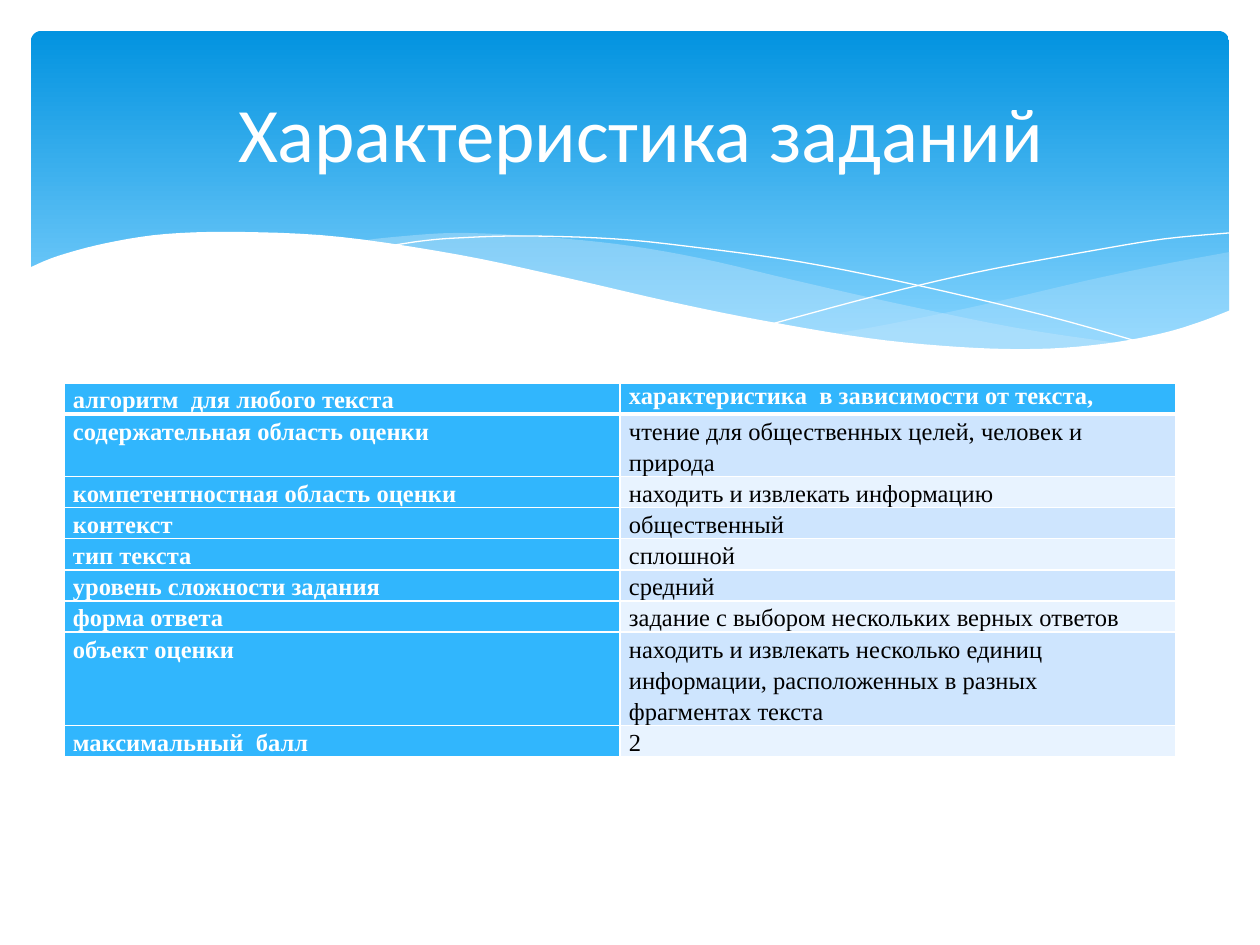
from dataclasses import dataclass

from lxml import etree
from pptx import Presentation
from pptx.dml.color import RGBColor
from pptx.enum.shapes import MSO_SHAPE
from pptx.enum.text import MSO_ANCHOR, PP_ALIGN
from pptx.oxml.ns import qn
from pptx.util import Emu, Pt

ROUNDED = MSO_SHAPE.ROUNDED_RECTANGLE
MIDDLE = MSO_ANCHOR.MIDDLE
CENTER, JUSTIFY, LEFT = PP_ALIGN.CENTER, PP_ALIGN.JUSTIFY, PP_ALIGN.LEFT


@dataclass(frozen=True)
class Theme:
    white: str = "FFFFFF"
    black: str = "000000"
    sky_top: str = "0293E0"
    sky_bottom: str = "83D3FE"
    haze: str = "C6E7FC"
    accent: str = "31B6FD"
    bands: tuple = ("CEE5FE", "E8F3FF")
    title_font: str = "Calibri"
    table_font: str = "Times New Roman"
    title_size: int = 44
    table_size: int = 14
    line_spacing: float = 1.15
    border: int = 1
    header_border: int = 3


THEME = Theme()

TITLE = "Характеристика заданий"
HEADER = ("алгоритм  для любого текста", "характеристика  в зависимости от текста,")
ROWS = [
    ("содержательная область оценки",
     ["чтение для общественных целей, человек и", "природа"]),
    ("компетентностная область оценки", ["находить и извлекать информацию"]),
    ("контекст", ["общественный"]),
    ("тип текста", ["сплошной"]),
    ("уровень сложности задания", ["средний"]),
    ("форма ответа", ["задание с выбором нескольких верных ответов"]),
    ("объект оценки",
     ["находить и извлекать несколько единиц",
      "информации, расположенных в разных",
      "фрагментах текста"]),
    ("максимальный  балл", ["2"]),
]

# Lengths in px, 126 to the inch
SCALE = 914400 // 126
SLIDE = (1260, 945)
BANNER = (31, 31, 1198, 340)
TITLE_BOX = (74, 45, 1134, 173)
TABLE_LEFT, TABLE_TOP, COLUMN_WIDTH, LINE_HEIGHT = 64, 383, 556, 31
CELL_INSET = 9

# Each outline is a list of smooth curves, joined end to end
RIGHT_HAZE = [
    [(1230, 252), (1160, 265), (1085, 281), (982, 305), (890, 324), (833, 334)],
    [(833, 334), (906, 343), (969, 349), (1026, 350), (1087, 347), (1150, 336),
     (1196, 324), (1230, 311)],
]
LEFT_HAZE = [
    [(1125, 344), (1017, 328), (890, 302), (793, 280), (699, 258), (616, 244),
     (529, 236), (455, 233), (394, 237), (360, 241)],
    [(360, 241), (431, 251), (509, 266), (566, 280), (668, 302), (757, 321),
     (857, 338), (942, 348), (1017, 350), (1080, 349), (1125, 344)],
]
FALLING_LINE = [[(389, 246), (422, 241), (457, 238), (524, 236), (616, 239),
                 (701, 248), (801, 262), (916, 285), (1047, 316), (1143, 343)]]
RISING_LINE = [[(772, 324), (876, 296), (978, 272), (1091, 251), (1164, 239),
                (1229, 233)]]
WHITE_WAVE = [
    [(29, 268), (58, 256), (107, 243), (166, 234), (243, 232), (341, 237),
     (460, 255), (563, 277), (667, 301), (760, 320), (867, 338), (959, 347),
     (1037, 349), (1103, 344), (1159, 334), (1197, 323), (1231, 310)],
    [(1231, 415)],
    [(29, 415)],
]


def px(length):
    return Emu(length * SCALE)


def rgb(color):
    return RGBColor.from_string(color)


def smooth(points, steps=5):
    """Return points along a Catmull-Rom curve through the given points."""
    padded = [points[0], *points, points[-1]]
    curve = [points[0]]
    for a, b, c, d in zip(padded, padded[1:], padded[2:], padded[3:]):
        for step in range(1, steps + 1):
            t = step / steps
            curve.append(tuple(
                (2 * q + (r - p) * t + (2 * p - 5 * q + 4 * r - s) * t ** 2
                 + (3 * q - p - 3 * r + s) * t ** 3) / 2
                for p, q, r, s in zip(a, b, c, d)))
    return curve


def add_curve(slide, curves, closed):
    points = [point for curve in curves for point in smooth(curve)]
    builder = slide.shapes.build_freeform(
        round(points[0][0] * SCALE), round(points[0][1] * SCALE))
    builder.add_line_segments(
        [(round(x * SCALE), round(y * SCALE)) for x, y in points[1:]], close=closed)
    shape = builder.convert_to_shape()
    shape.shadow.inherit = False
    return shape


def add_area(slide, curves, color, opacity=100):
    shape = add_curve(slide, curves, True)
    shape.line.fill.background()
    shape.fill.solid()
    shape.fill.fore_color.rgb = rgb(color)
    if opacity < 100:
        color_element = shape.fill._xPr.find(qn("a:solidFill"))[0]
        etree.SubElement(color_element, qn("a:alpha"), val=str(opacity * 1000))


def add_hairline(slide, curves):
    shape = add_curve(slide, curves, False)
    shape.fill.background()
    shape.line.color.rgb = rgb(THEME.white)
    shape.line.width = Pt(0)


def add_banner(slide):
    shape = slide.shapes.add_shape(ROUNDED, *map(px, BANNER))
    shape.adjustments[0] = 0.03
    shape.shadow.inherit = False
    shape.line.fill.background()
    shape.fill.gradient()
    shape.fill.gradient_angle = 270
    stops = zip(shape.fill.gradient_stops, (0, 0.9), (THEME.sky_top, THEME.sky_bottom))
    for stop, position, color in stops:
        stop.position = position
        stop.color.rgb = rgb(color)


def add_run(paragraph, text, font, size, color, bold=False):
    run = paragraph.add_run()
    run.text = text
    run.font.name = font
    run.font.size = Pt(size)
    run.font.bold = bold
    run.font.color.rgb = rgb(color)


def add_title(slide):
    frame = slide.shapes.add_textbox(*map(px, TITLE_BOX)).text_frame
    frame.word_wrap = True
    frame.vertical_anchor = MIDDLE
    paragraph = frame.paragraphs[0]
    paragraph.alignment = CENTER
    add_run(paragraph, TITLE, THEME.title_font, THEME.title_size, THEME.white)


def set_borders(cell, top, bottom):
    properties = cell._tc.get_or_add_tcPr()
    sides = (("L", THEME.border), ("R", THEME.border), ("T", top), ("B", bottom))
    for index, (side, width) in enumerate(sides):
        line = etree.Element(qn(f"a:ln{side}"), w=str(Pt(width)))
        fill = etree.SubElement(line, qn("a:solidFill"))
        etree.SubElement(fill, qn("a:srgbClr"), val=THEME.white)
        properties.insert(index, line)


def fill_cell(cell, lines, fill, strong, justified=True):
    cell.margin_left = cell.margin_right = px(CELL_INSET)
    cell.margin_top = cell.margin_bottom = 0
    cell.fill.solid()
    cell.fill.fore_color.rgb = rgb(fill)
    color = THEME.white if strong else THEME.black
    frame = cell.text_frame
    for index, text in enumerate(lines):
        paragraph = frame.add_paragraph() if index else frame.paragraphs[0]
        paragraph.alignment = JUSTIFY if justified else LEFT
        if justified:
            paragraph.line_spacing = THEME.line_spacing
        add_run(paragraph, text, THEME.table_font, THEME.table_size, color, strong)


def add_task_table(slide):
    heights = [LINE_HEIGHT] + [LINE_HEIGHT * len(lines) for _, lines in ROWS]
    table = slide.shapes.add_table(
        len(heights), 2, px(TABLE_LEFT), px(TABLE_TOP),
        px(2 * COLUMN_WIDTH), px(sum(heights))).table
    for row, height in zip(table.rows, heights):
        row.height = px(height)
    fill_cell(table.cell(0, 0), [HEADER[0]], THEME.accent, True)
    fill_cell(table.cell(0, 1), [HEADER[1]], THEME.accent, True, justified=False)
    for index, (label, lines) in enumerate(ROWS):
        fill_cell(table.cell(index + 1, 0), [label], THEME.accent, True)
        fill_cell(table.cell(index + 1, 1), lines, THEME.bands[index % 2], False)
    for index, row in enumerate(table.rows):
        top = THEME.header_border if index == 1 else THEME.border
        bottom = THEME.header_border if index == 0 else THEME.border
        for cell in row.cells:
            set_borders(cell, top, bottom)


def main():
    presentation = Presentation()
    presentation.slide_width, presentation.slide_height = map(px, SLIDE)
    slide = presentation.slides.add_slide(presentation.slide_layouts[6])
    add_banner(slide)
    add_area(slide, RIGHT_HAZE, THEME.haze, 29)
    add_area(slide, LEFT_HAZE, THEME.haze, 40)
    add_hairline(slide, FALLING_LINE)
    add_hairline(slide, RISING_LINE)
    add_area(slide, WHITE_WAVE, THEME.white)
    add_task_table(slide)
    add_title(slide)
    presentation.save("out.pptx")


if __name__ == "__main__":
    main()
